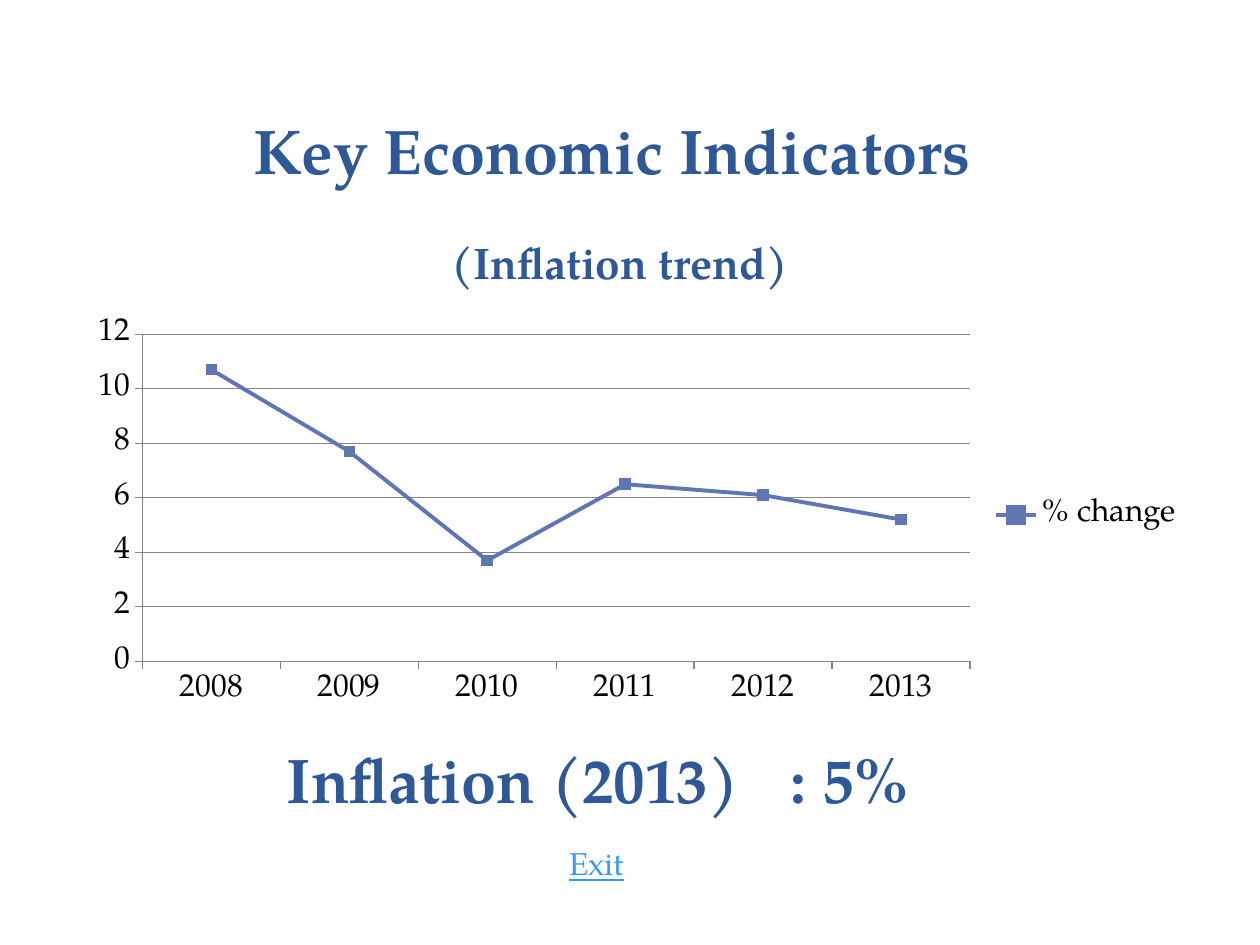
from dataclasses import dataclass

from lxml.etree import SubElement as Sub
from pptx import Presentation
from pptx.chart.data import CategoryChartData as Data
from pptx.dml.color import RGBColor
from pptx.enum.chart import XL_CHART_TYPE as Kind
from pptx.enum.chart import XL_LEGEND_POSITION as Place
from pptx.enum.chart import XL_MARKER_STYLE as Mark
from pptx.enum.chart import XL_TICK_MARK as Tick
from pptx.enum.text import MSO_ANCHOR as Anchor
from pptx.enum.text import MSO_AUTO_SIZE as Fit
from pptx.enum.text import PP_ALIGN as Align
from pptx.oxml.ns import qn
from pptx.util import Inches, Pt

FACE = "TeX Gyre Pagella"
NAVY = RGBColor(0x2F, 0x58, 0x97)
BLUE = RGBColor(0x60, 0x76, 0xB4)
SKY = RGBColor(0x33, 0x99, 0xFF)
GRAY = RGBColor(0x87, 0x87, 0x87)
BLACK = RGBColor(0, 0, 0)


@dataclass
class Box:
    left: float
    top: float
    width: float
    height: float

    def frame(self) -> tuple:
        return tuple(Inches(n) for n in (self.left, self.top, self.width, self.height))


@dataclass
class Style:
    size: float
    color: RGBColor
    bold: bool = False
    under: bool = False


@dataclass
class Note:
    box: Box
    text: str
    style: Style
    align: Align


NOTES = [
    Note(Box(0.75, 5.83, 8, 0.71), "Inflation (2013)\t: 5%", Style(36, NAVY, True), Align.CENTER),
    Note(Box(4.42, 6.65, 0.67, 0.4), "Exit", Style(18, SKY, under=True), Align.LEFT),
]
RATES = {"2008": 10.7, "2009": 7.7, "2010": 3.7, "2011": 6.5, "2012": 6.1, "2013": 5.2}
PLOT = {"x": 0.07, "y": 0.07, "w": 0.73, "h": 0.78}


def set_font(font, style: Style) -> None:
    font.name = FACE
    font.size = Pt(style.size)
    font.bold = style.bold
    font.underline = style.under
    font.color.rgb = style.color


def add_run(para, text: str, style: Style) -> None:
    run = para.add_run()
    run.text = text
    set_font(run.font, style)


def add_title(slide) -> None:
    title = slide.shapes.title
    title.left, title.top, title.width, title.height = Box(0.42, 0.92, 9, 1.42).frame()
    frame = title.text_frame
    frame.auto_size = Fit.NONE
    frame.vertical_anchor = Anchor.BOTTOM
    para = frame.paragraphs[0]
    para.alignment = Align.CENTER
    para.line_spacing = Pt(58)
    add_run(para, "Key Economic Indicators ", Style(36, NAVY, True))
    para.add_line_break()
    add_run(para, "(Inflation trend)", Style(25.2, NAVY, True))


def add_note(slide, note: Note) -> None:
    frame = slide.shapes.add_textbox(*note.box.frame()).text_frame
    frame.word_wrap = True
    frame.auto_size = Fit.SHAPE_TO_FIT_TEXT
    para = frame.paragraphs[0]
    para.alignment = note.align
    add_run(para, note.text, note.style)


def set_line(line, color: RGBColor, width: float) -> None:
    line.color.rgb = color
    line.width = Pt(width)


def set_plot(chart) -> None:
    area = chart.plots[0]._element.getparent()
    for old in area.findall(qn("c:layout")):
        area.remove(old)
    layout = Sub(area, qn("c:layout"))
    area.insert(0, layout)
    manual = Sub(layout, qn("c:manualLayout"))
    Sub(manual, qn("c:layoutTarget"), val="inner")
    for key in "xy":
        Sub(manual, qn(f"c:{key}Mode"), val="edge")
    for key, value in PLOT.items():
        Sub(manual, qn(f"c:{key}"), val=str(value))


def add_graph(slide) -> None:
    data = Data()
    data.categories = list(RATES)
    data.add_series("% change", list(RATES.values()))
    frame = Box(0.5, 2.42, 9, 3.33).frame()
    chart = slide.shapes.add_chart(Kind.LINE_MARKERS, *frame, data).chart
    set_font(chart.font, Style(18, BLACK))
    chart.has_title = False
    chart.has_legend = True
    chart.legend.position = Place.RIGHT
    chart.legend.include_in_layout = False
    set_plot(chart)
    for axis in (chart.category_axis, chart.value_axis):
        axis.major_tick_mark = Tick.OUTSIDE
        axis.minor_tick_mark = Tick.NONE
        set_line(axis.format.line, GRAY, 0.75)
    scale = chart.value_axis
    scale.minimum_scale, scale.maximum_scale, scale.major_unit = 0, 12, 2
    scale.has_major_gridlines = True
    set_line(scale.major_gridlines.format.line, GRAY, 0.75)
    plot = chart.plots[0]
    plot.vary_by_categories = False
    trend = plot.series[0]
    trend.smooth = False
    set_line(trend.format.line, BLUE, 2.25)
    mark = trend.marker
    mark.style = Mark.SQUARE
    mark.size = 6
    mark.format.fill.solid()
    mark.format.fill.fore_color.rgb = BLUE
    set_line(mark.format.line, BLUE, 0.75)


def main() -> None:
    deck = Presentation()
    deck.slide_width, deck.slide_height = Inches(10), Inches(7.5)
    slide = deck.slides.add_slide(deck.slide_layouts[5])
    add_title(slide)
    add_graph(slide)
    for note in NOTES:
        add_note(slide, note)
    deck.save("out.pptx")


if __name__ == "__main__":
    main()
